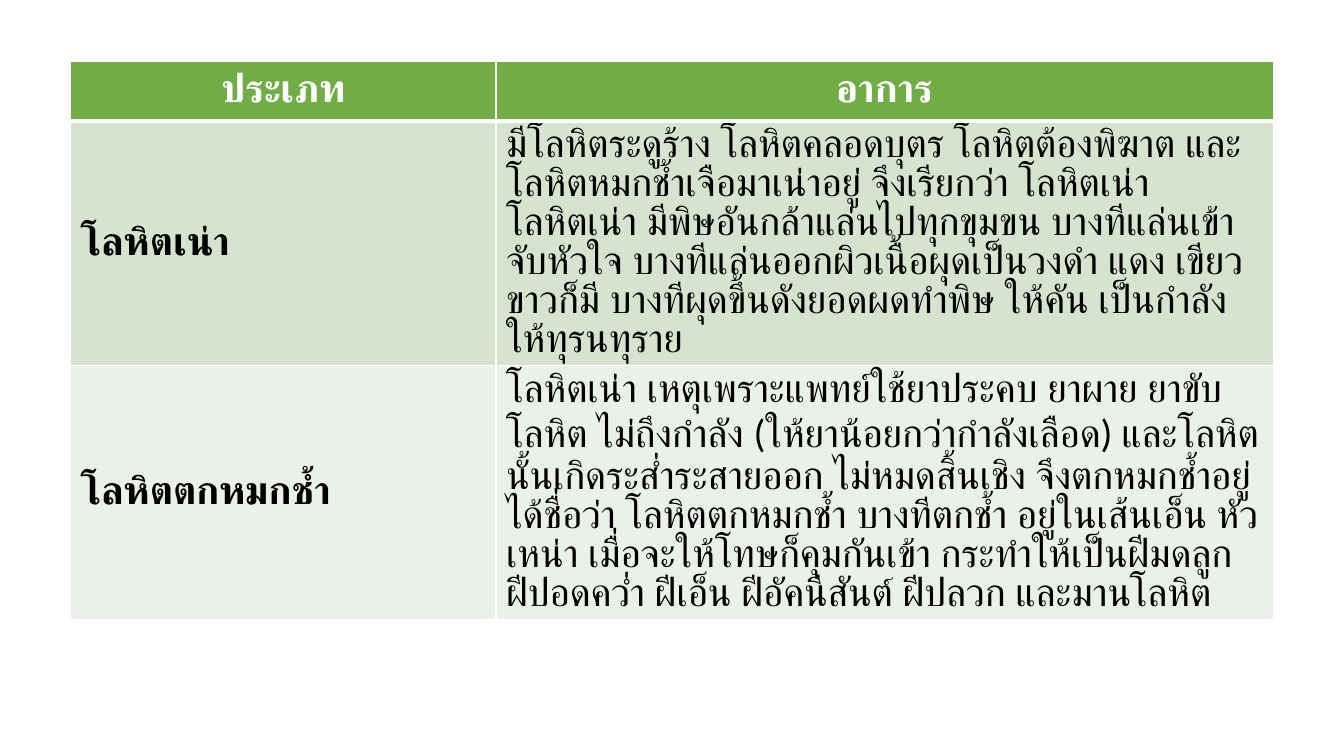
"""Builds a slide with a table of two blood conditions and their symptoms."""
from dataclasses import dataclass

from lxml.etree import SubElement
from pptx import Presentation
from pptx.dml.color import RGBColor
from pptx.enum.lang import MSO_LANGUAGE_ID
from pptx.enum.text import MSO_ANCHOR, PP_ALIGN
from pptx.oxml.ns import qn
from pptx.util import Inches, Pt

HEADINGS = ("ประเภท", "อาการ")
CONDITIONS = [
    ("โลหิตเน่า", [
        "มีโลหิตระดูร้าง โลหิตคลอดบุตร โลหิตต้องพิฆาต และโลหิตหมกช้ำเจือมาเน่าอยู่ จึงเรียกว่า โลหิตเน่า",
        "โลหิตเน่า มีพิษอันกล้าแล่นไปทุกขุมขน บางทีแล่นเข้าจับหัวใจ บางทีแล่นออกผิวเนื้อผุดเป็นวงดำ แดง เขียว "
        "ขาวก็มี บางทีผุดขึ้นดังยอดผดทำพิษ ให้คัน เป็นกำลัง ให้ทุรนทุราย",
    ]),
    ("โลหิตตกหมกช้ำ", [
        "โลหิตเน่า เหตุเพราะแพทย์ใช้ยาประคบ ยาผาย ยาขับโลหิต ไม่ถึงกำลัง (ให้ยาน้อยกว่ากำลังเลือด) "
        "และโลหิตนั้นเกิดระส่ำระสายออก ไม่หมดสิ้นเชิง จึงตกหมกช้ำอยู่ได้ชื่อว่า โลหิตตกหมกช้ำ บางทีตกช้ำ "
        "อยู่ในเส้นเอ็น หัวเหน่า เมื่อจะให้โทษก็คุมกันเข้า กระทำให้เป็นฝีมดลูก ฝีปอดคว่ำ ฝีเอ็น "
        "ฝีอัคนีสันต์ ฝีปลวก และมานโลหิต",
    ]),
]
TABLE_LEFT, TABLE_TOP = 0.7, 0.61
COLUMN_WIDTHS = (4.22, 7.71)
ROW_HEIGHTS = (0.59, 2.41, 2.46)


@dataclass(frozen=True)
class Theme:
    """Colours and type of the slide."""
    font: str = "Calibri"
    size: int = 28
    heading_text: str = "FFFFFF"
    body_text: str = "000000"
    heading_fill: str = "70AD47"
    bands: tuple = ("D5E3CF", "EBF1E9")
    border: str = "FFFFFF"
    thin: int = 1
    thick: int = 3


THEME = Theme()


def set_borders(cell, bottom_width):
    """Draw the four cell borders; they must precede the fill in the XML."""
    properties = cell._tc.get_or_add_tcPr()
    widths = {"L": THEME.thin, "R": THEME.thin, "T": THEME.thin, "B": bottom_width}
    for side, width in widths.items():
        line = SubElement(properties, qn(f"a:ln{side}"), w=str(Pt(width)))
        SubElement(SubElement(line, qn("a:solidFill")), qn("a:srgbClr"), val=THEME.border)


def fill_cell(cell, paragraphs, fill, color, bold, align, bottom_width=THEME.thin):
    """Style one cell and write its paragraphs."""
    set_borders(cell, bottom_width)
    cell.fill.solid()
    cell.fill.fore_color.rgb = RGBColor.from_string(fill)
    cell.vertical_anchor = MSO_ANCHOR.MIDDLE
    frame = cell.text_frame
    for index, wording in enumerate(paragraphs):
        paragraph = frame.add_paragraph() if index else frame.paragraphs[0]
        paragraph.alignment = align
        run = paragraph.add_run()
        run.text = wording
        run.font.name = THEME.font
        run.font.size = Pt(THEME.size)
        run.font.bold = bold
        run.font.color.rgb = RGBColor.from_string(color)
        run.font.language_id = MSO_LANGUAGE_ID.THAI


def main():
    """Build and save the slide."""
    deck = Presentation()
    deck.slide_width, deck.slide_height = Inches(13.33), Inches(7.5)
    slide = deck.slides.add_slide(deck.slide_layouts[6])
    symptoms_table = slide.shapes.add_table(
        len(ROW_HEIGHTS), len(COLUMN_WIDTHS), Inches(TABLE_LEFT), Inches(TABLE_TOP),
        Inches(sum(COLUMN_WIDTHS)), Inches(sum(ROW_HEIGHTS))).table
    for column, width in zip(symptoms_table.columns, COLUMN_WIDTHS):
        column.width = Inches(width)
    for row, height in zip(symptoms_table.rows, ROW_HEIGHTS):
        row.height = Inches(height)

    for column, heading in enumerate(HEADINGS):
        fill_cell(symptoms_table.cell(0, column), [heading], THEME.heading_fill,
                  THEME.heading_text, True, PP_ALIGN.CENTER, THEME.thick)
    for row, ((condition, symptoms), band) in enumerate(zip(CONDITIONS, THEME.bands), 1):
        fill_cell(symptoms_table.cell(row, 0), [condition], band,
                  THEME.body_text, True, PP_ALIGN.LEFT)
        fill_cell(symptoms_table.cell(row, 1), symptoms, band,
                  THEME.body_text, False, PP_ALIGN.LEFT)
    deck.save("out.pptx")


if __name__ == "__main__":
    main()
